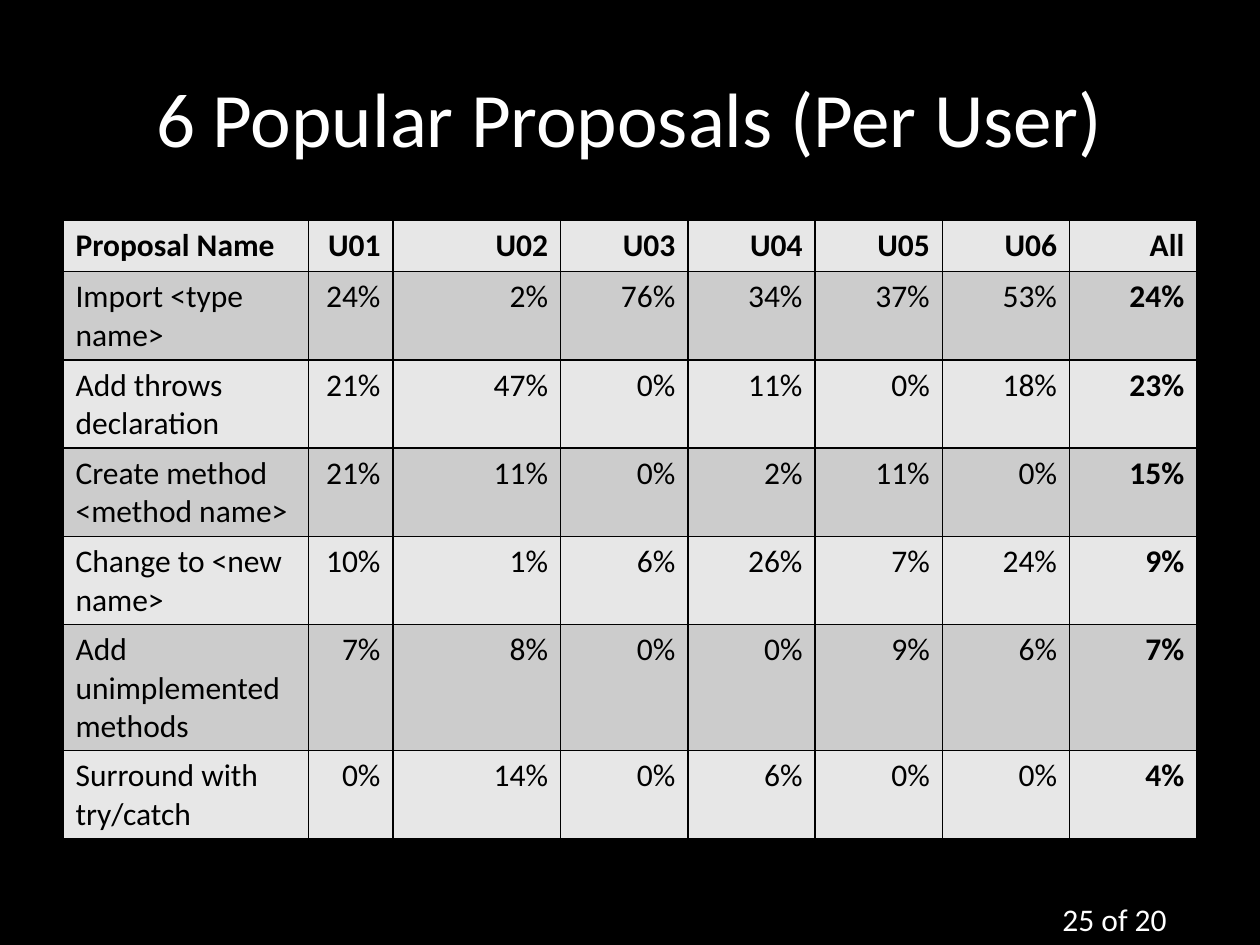
"""Build a slide with a table of popular proposals per user."""
import pptx
import pptx.dml.color
import pptx.enum.text
import pptx.oxml
import pptx.oxml.ns
import pptx.util

Pt = pptx.util.Pt
ALIGN = pptx.enum.text.PP_ALIGN
ANCHOR = pptx.enum.text.MSO_ANCHOR
COLORS = {"black": "000000", "white": "FFFFFF", "light": "E7E7E7", "grey": "CCCCCC"}
FONT = "Calibri"

USERS = ["U01", "U02", "U03", "U04", "U05", "U06"]
PROPOSALS = [
    ("Import <type name>", 24, 2, 76, 34, 37, 53, 24),
    ("Add throws declaration", 21, 47, 0, 11, 0, 18, 23),
    ("Create method <method name>", 21, 11, 0, 2, 11, 0, 15),
    ("Change to <new name>", 10, 1, 6, 26, 7, 24, 9),
    ("Add unimplemented methods", 7, 8, 0, 0, 9, 6, 7),
    ("Surround with try/catch", 0, 14, 0, 6, 0, 0, 4),
]
COL_WIDTHS = [140.4, 48.24, 95.76] + [72.72] * 5
ROW_HEIGHT = 29.2


def rgb(name):
    """Return the named colour."""
    return pptx.dml.color.RGBColor.from_string(COLORS[name])


class SlideBuilder:
    """Hold the style and the current slide."""

    def __init__(self, prs):
        self.s = prs.slides.add_slide(prs.slide_layouts[5])
        fill = self.s.background.fill
        fill.solid()
        fill.fore_color.rgb = rgb("black")

    def run(self, tf, text, size, color, align=ALIGN.LEFT, bold=False):
        """Add one formatted run to the first paragraph."""
        p = tf.paragraphs[0]
        p.alignment = align
        r = p.add_run()
        r.text = text
        r.font.name = FONT
        r.font.size = Pt(size)
        r.font.bold = bold
        r.font.color.rgb = rgb(color)

    def title(self, text, left, top, width, height):
        """Place and fill the title placeholder."""
        sp = self.s.shapes.title
        sp.left, sp.top, sp.width, sp.height = map(Pt, (left, top, width, height))
        sp.text_frame.vertical_anchor = ANCHOR.MIDDLE
        self.run(sp.text_frame, text, 44, "white", ALIGN.CENTER)

    def text(self, text, left, top, width, height):
        """Add a text box."""
        sp = self.s.shapes.add_textbox(*map(Pt, (left, top, width, height)))
        tf = sp.text_frame
        tf.word_wrap = True
        tf.auto_size = pptx.enum.text.MSO_AUTO_SIZE.SHAPE_TO_FIT_TEXT
        self.run(tf, text, 18, "white")

    def borders(self, cell):
        """Draw a thin black line on each side of a cell."""
        tc_pr = cell._tc.get_or_add_tcPr()
        for i, side in enumerate(("lnL", "lnR", "lnT", "lnB")):
            ln = pptx.oxml.parse_xml(
                f'<a:{side} {pptx.oxml.ns.nsdecls("a")} w="{Pt(1)}"><a:solidFill>'
                f'<a:srgbClr val="{COLORS["black"]}"/></a:solidFill></a:{side}>')
            tc_pr.insert(i, ln)

    def table(self, rows, left, top):
        """Add a banded table with bold header row and last column."""
        size = sum(COL_WIDTHS), ROW_HEIGHT * len(rows)
        frame = self.s.shapes.add_table(
            len(rows), len(COL_WIDTHS), *map(Pt, (left, top, *size)))
        table = frame.table
        for col, width in zip(table.columns, COL_WIDTHS):
            col.width = Pt(width)
        for i, row in enumerate(rows):
            table.rows[i].height = Pt(ROW_HEIGHT)
            for j, value in enumerate(row):
                cell = table.cell(i, j)
                cell.fill.solid()
                cell.fill.fore_color.rgb = rgb("grey" if i % 2 else "light")
                self.borders(cell)
                self.run(cell.text_frame, value, 18, "black",
                         ALIGN.RIGHT if j else ALIGN.LEFT,
                         i == 0 or j == len(row) - 1)


def main():
    """Build and save the presentation."""
    prs = pptx.Presentation()
    prs.slide_width, prs.slide_height = Pt(720), Pt(540)
    slide = SlideBuilder(prs)
    slide.text("25 of 20", 600, 510.5, 84, 29)
    slide.title("6 Popular Proposals (Per User)", 36, 21.6, 648, 90)
    rows = [["Proposal Name", *USERS, "All"]]
    rows += [[name, *(f"{share}%" for share in shares)] for name, *shares in PROPOSALS]
    slide.table(rows, 36, 126)
    prs.save("out.pptx")


if __name__ == "__main__":
    main()
